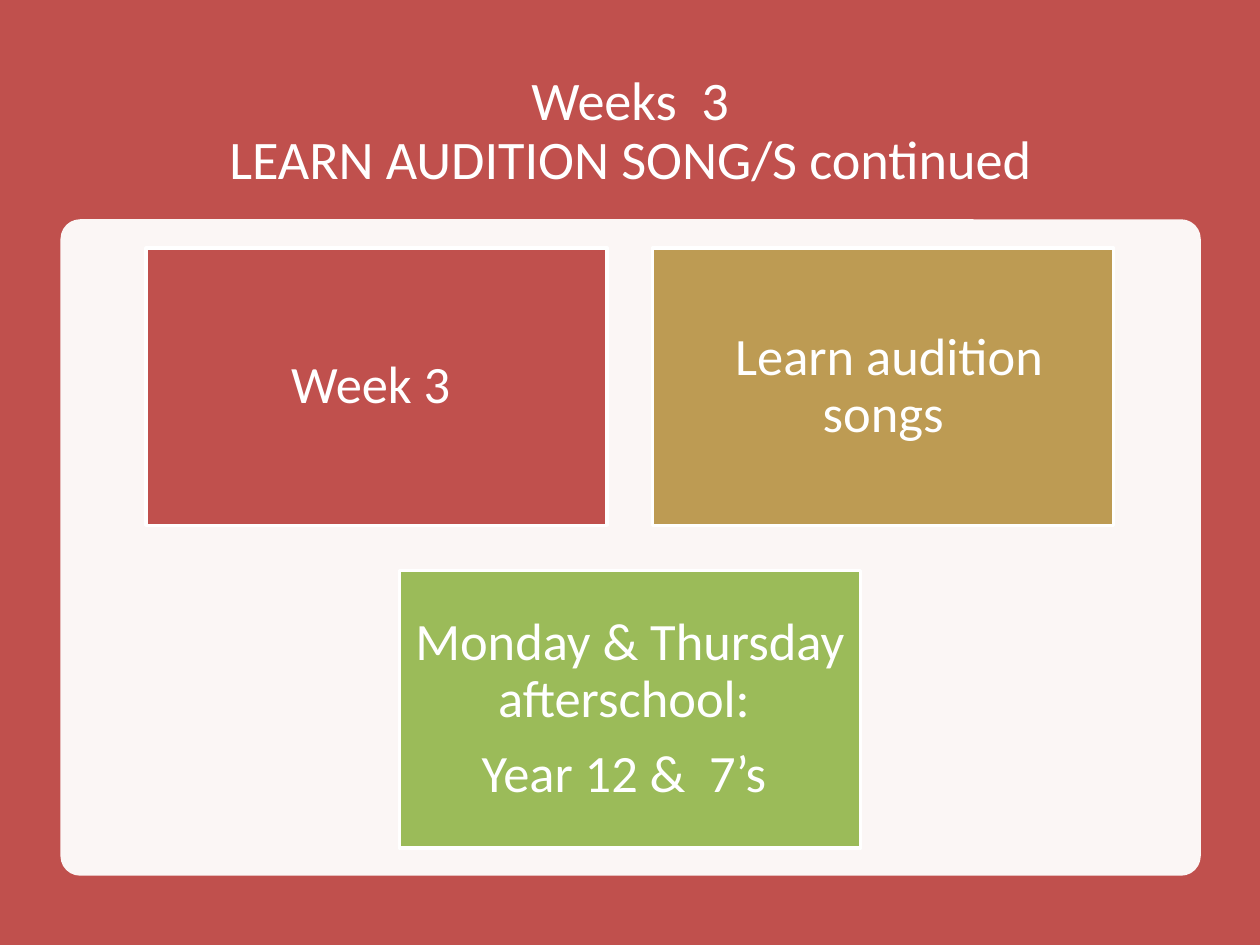
from pptx import Presentation
from pptx.dml.color import RGBColor
from pptx.enum.shapes import MSO_SHAPE as Shape
from pptx.enum.text import MSO_ANCHOR as Anchor, PP_ALIGN as Align
from pptx.oxml.ns import qn
from pptx.util import Inches, Pt
from lxml.etree import SubElement

COLOURS = {"red": "C0504D", "gold": "BD9B53", "green": "9BBB59", "white": "FFFFFF"}
WIDTH, HEIGHT = 10, 7.5
CARD_WIDTH, CARD_HEIGHT, GAP = 3.66, 2.2, 0.36
GRID_TOP = 1.97
CARD_ROWS = [
    [("red", ["Week 3 "]), ("gold", [" Learn audition songs"])],
    [("green", ["Monday & Thursday afterschool: ", "Year 12 &  7’s "])],
]


class SlideBuilder:
    font = "Calibri"

    def __init__(self, page):
        self.page = page

    def colour(self, name):
        return RGBColor.from_string(COLOURS[name])

    def panel(self, kind, left, top, width, height, fill, opacity=100):
        box = self.page.shapes.add_shape(
            kind, Inches(left), Inches(top), Inches(width), Inches(height))
        box.shadow.inherit = False
        box.fill.solid()
        box.fill.fore_color.rgb = self.colour(fill)
        box.line.fill.background()
        if opacity < 100:
            tint = box.fill._xPr.find(qn("a:solidFill"))[0]
            SubElement(tint, qn("a:alpha")).set("val", str(opacity * 1000))
        return box

    def add_text(self, box, paragraphs, size, inset):
        """Each paragraph is a string; a newline in it is a line break."""
        frame = box.text_frame
        frame.word_wrap = True
        frame.vertical_anchor = Anchor.MIDDLE
        frame.margin_left = frame.margin_right = Inches(inset)
        frame.margin_top = frame.margin_bottom = Inches(inset)
        for index, text in enumerate(paragraphs):
            para = frame.add_paragraph() if index else frame.paragraphs[0]
            para.alignment = Align.CENTER
            para.line_spacing = 0.9
            para.space_before = Pt(0.35 * size if index else 0)
            for number, line in enumerate(text.split("\n")):
                if number:
                    para.add_line_break()
                span = para.add_run()
                span.text = line
                span.font.name = self.font
                span.font.size = Pt(size)
                span.font.color.rgb = self.colour("white")

    def title(self, text, left, top, width, height):
        box = self.page.shapes.add_textbox(
            Inches(left), Inches(top), Inches(width), Inches(height))
        self.add_text(box, [text], 31, 0.05)

    def card(self, left, top, fill, paragraphs):
        box = self.panel(Shape.RECTANGLE, left, top, CARD_WIDTH, CARD_HEIGHT, fill)
        box.line.color.rgb = self.colour("white")
        box.line.width = Pt(2)
        self.add_text(box, paragraphs, 30, 0.12)

    def card_grid(self, rows):
        """Centre every row of cards across the slide."""
        for row, cards in enumerate(rows):
            row_width = len(cards) * (CARD_WIDTH + GAP) - GAP
            start = (WIDTH - row_width) / 2
            top = GRID_TOP + row * (CARD_HEIGHT + GAP)
            for column, (fill, paragraphs) in enumerate(cards):
                self.card(start + column * (CARD_WIDTH + GAP), top, fill, paragraphs)


def main():
    deck = Presentation()
    deck.slide_width, deck.slide_height = Inches(WIDTH), Inches(HEIGHT)
    builder = SlideBuilder(deck.slides.add_slide(deck.slide_layouts[6]))
    builder.panel(Shape.RECTANGLE, 0, 0, WIDTH, HEIGHT, "red")
    builder.title("Weeks  3\nLEARN AUDITION SONG/S continued", 0.69, 0.5, 8.62, 1.1)
    backdrop = builder.panel(Shape.ROUNDED_RECTANGLE, 0.48, 1.74, 9.05, 5.21, "white", 95)
    backdrop.adjustments[0] = 0.03
    builder.card_grid(CARD_ROWS)
    deck.save("out.pptx")


if __name__ == "__main__":
    main()
